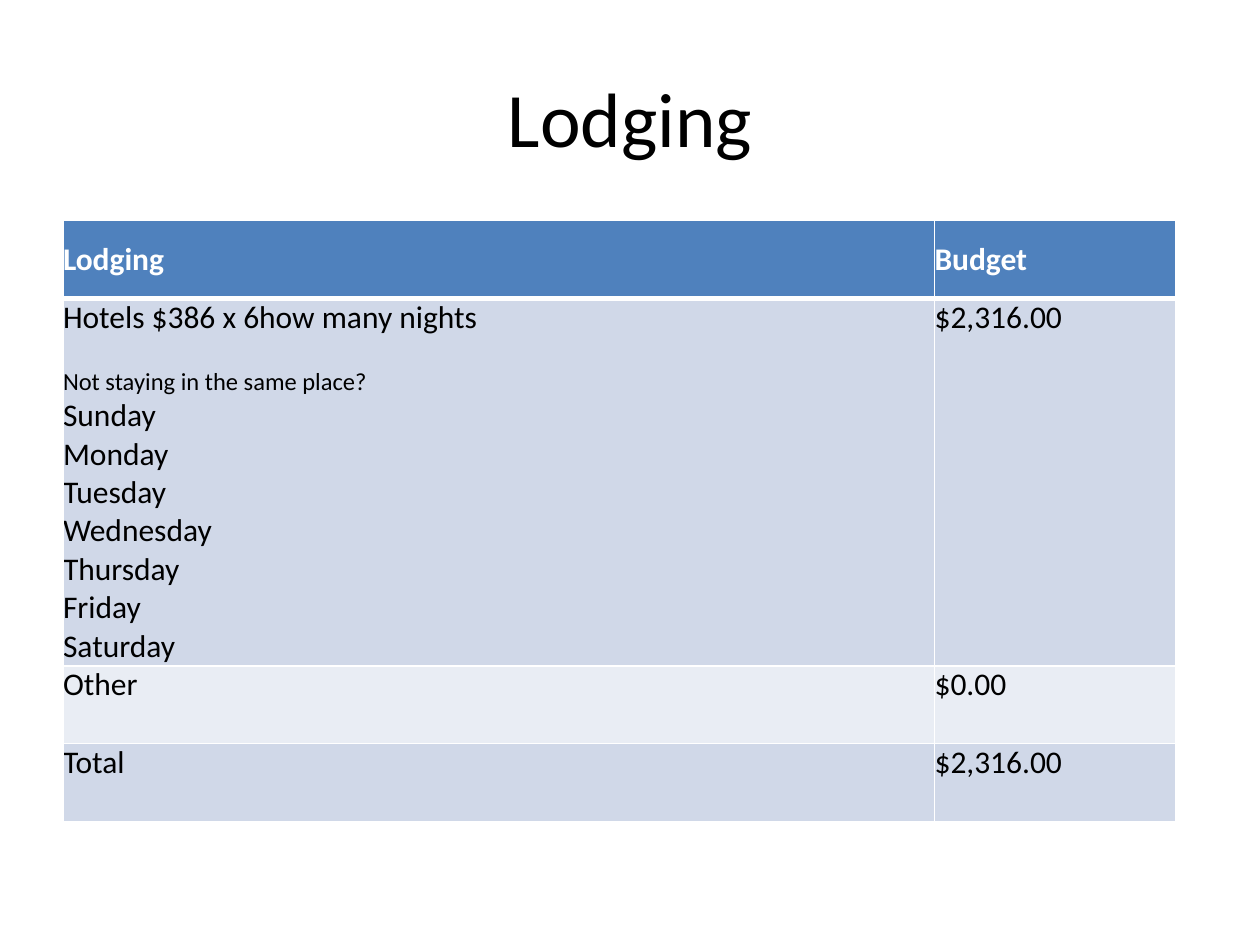
from dataclasses import dataclass

from lxml.etree import SubElement
from pptx import Presentation
from pptx.dml.color import RGBColor
from pptx.enum.text import MSO_ANCHOR, PP_ALIGN
from pptx.oxml.ns import qn
from pptx.util import Cm, Pt


@dataclass(frozen=True)
class Theme:
    font: str = "Calibri"
    ink: str = "000000"
    paper: str = "FFFFFF"
    header: str = "4F81BD"
    bands: tuple = ("D0D8E8", "E9EDF4")
    title_size: int = 44
    body_size: int = 18
    note_size: int = 14
    thin_rule: int = 1
    header_rule: int = 3


THEME = Theme()
NOTE = "Not staying in the same place?"
DAYS = ["Sunday", "Monday", "Tuesday", "Wednesday", "Thursday", "Friday", "Saturday"]
BUDGET = [
    (["Lodging"], ["Budget"]),
    (["Hotels $386 x 6how many nights", NOTE, *DAYS], ["$2,316.00"]),
    (["Other"], ["$0.00"]),
    (["Total"], ["$2,316.00"]),
]
COLUMN_WIDTHS = (Cm(17.57), Cm(4.87))
ROW_HEIGHT = Cm(1.57)
TABLE_HEIGHT = Cm(12.04)  # the hotels row grows with its list of days


def style_paragraph(paragraph, size, color, bold=False):
    for run in paragraph.runs:
        run.font.name = THEME.font
        run.font.size = Pt(size)
        run.font.bold = bold
        run.font.color.rgb = RGBColor.from_string(color)


def add_title(slide, text):
    title = slide.shapes.title
    title.left, title.top = Cm(1.27), Cm(0.76)
    title.width, title.height = Cm(22.86), Cm(3.18)
    title.text_frame.text = text
    title.text_frame.vertical_anchor = MSO_ANCHOR.MIDDLE
    heading = title.text_frame.paragraphs[0]
    heading.alignment = PP_ALIGN.CENTER
    style_paragraph(heading, THEME.title_size, THEME.ink)


def set_borders(cell, is_header):
    bottom = THEME.header_rule if is_header else THEME.thin_rule
    widths = {"a:lnL": THEME.thin_rule, "a:lnR": THEME.thin_rule}
    if is_header:
        widths["a:lnT"] = THEME.thin_rule
    widths["a:lnB"] = bottom
    properties = cell._tc.get_or_add_tcPr()
    for position, (tag, width) in enumerate(widths.items()):
        line = SubElement(properties, qn(tag), w=str(Pt(width)))
        fill = SubElement(line, qn("a:solidFill"))
        SubElement(fill, qn("a:srgbClr"), val=THEME.paper)
        properties.insert(position, line)  # borders come before the fill


def fill_cell(cell, lines, row_number):
    is_header = row_number == 0
    cell.margin_left = cell.margin_right = cell.margin_top = cell.margin_bottom = 0
    cell.vertical_anchor = MSO_ANCHOR.MIDDLE if is_header else MSO_ANCHOR.TOP
    cell.fill.solid()
    background = THEME.header if is_header else THEME.bands[(row_number - 1) % 2]
    cell.fill.fore_color.rgb = RGBColor.from_string(background)
    set_borders(cell, is_header)

    cell.text_frame.text = "\n".join(lines)
    for paragraph in cell.text_frame.paragraphs:
        is_note = paragraph.text == NOTE
        if is_note:
            paragraph.space_before = Pt(17)
        style_paragraph(
            paragraph,
            THEME.note_size if is_note else THEME.body_size,
            THEME.paper if is_header else THEME.ink,
            bold=is_header,
        )


def add_budget_table(slide):
    frame = slide.shapes.add_table(
        len(BUDGET), len(COLUMN_WIDTHS), Cm(1.27), Cm(4.45), sum(COLUMN_WIDTHS), TABLE_HEIGHT
    )
    table = frame.table
    for column, width in zip(table.columns, COLUMN_WIDTHS):
        column.width = width
    for row_number, (row, entries) in enumerate(zip(table.rows, BUDGET)):
        row.height = ROW_HEIGHT
        for cell, lines in zip(row.cells, entries):
            fill_cell(cell, lines, row_number)
    frame.height = TABLE_HEIGHT


def main():
    presentation = Presentation()
    presentation.slide_width, presentation.slide_height = Cm(25.4), Cm(19.05)
    slide = presentation.slides.add_slide(presentation.slide_layouts[5])

    # Heading
    add_title(slide, "Lodging")
    # Lodging costs
    add_budget_table(slide)

    presentation.save("out.pptx")


if __name__ == "__main__":
    main()
